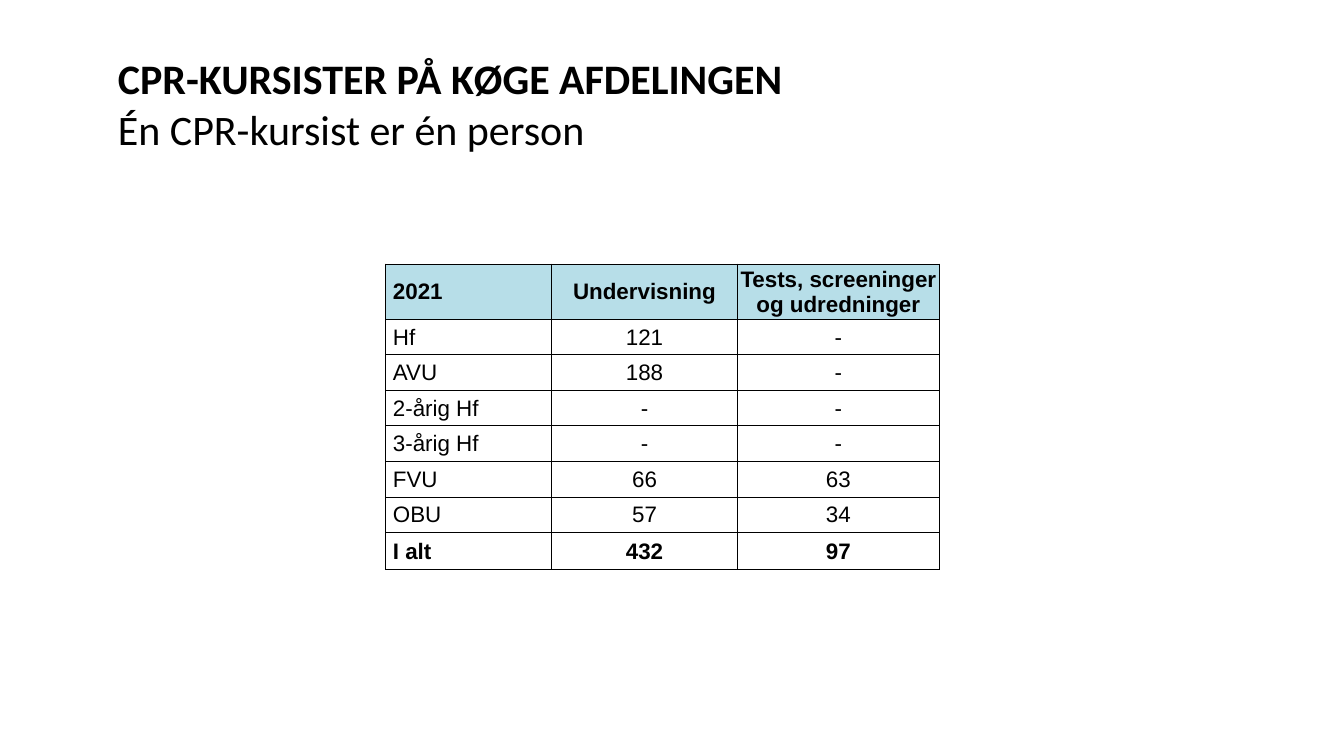
from dataclasses import dataclass

from lxml.etree import SubElement
from pptx import Presentation
from pptx.dml.color import RGBColor
from pptx.enum.text import MSO_ANCHOR, MSO_AUTO_SIZE, PP_ALIGN
from pptx.oxml.ns import qn
from pptx.util import Pt


@dataclass(frozen=True)
class Theme:
    ink: RGBColor = RGBColor(0x00, 0x00, 0x00)
    header_fill: RGBColor = RGBColor(0xB7, 0xDE, 0xE8)
    title_font: str = "Calibri"
    table_font: str = "Arial"
    title_size: int = 30
    table_size: int = 16
    border_width: float = 0.5


THEME = Theme()

HEADINGS = ("CPR-KURSISTER PÅ KØGE AFDELINGEN", "Én CPR-kursist er én person")
STUDENTS = (
    ("2021", "Undervisning", "Tests, screeninger og udredninger"),
    ("Hf", "121", "-"),
    ("AVU", "188", "-"),
    ("2-årig Hf", "-", "-"),
    ("3-årig Hf", "-", "-"),
    ("FVU", "66", "63"),
    ("OBU", "57", "34"),
    ("I alt", "432", "97"),
)
COLUMN_WIDTHS = (118.4, 133, 144)
HEADER_HEIGHT, ROW_HEIGHT, TOTAL_HEIGHT = 39.3, 25.4, 26.4


def set_font(paragraph, name, size, bold):
    paragraph.font.name = name
    paragraph.font.size = Pt(size)
    paragraph.font.bold = bold
    paragraph.font.color.rgb = THEME.ink


def add_borders(cell):
    properties = cell._tc.get_or_add_tcPr()
    for position, side in enumerate(("a:lnL", "a:lnR", "a:lnT", "a:lnB")):
        line = properties.makeelement(qn(side), {"w": str(Pt(THEME.border_width))})
        properties.insert(position, line)
        solid = SubElement(line, qn("a:solidFill"))
        SubElement(solid, qn("a:srgbClr"), val=str(THEME.ink))


def place_title(slide, left, top, width, height):
    title = slide.shapes.title
    title.left, title.top = Pt(left), Pt(top)
    title.width, title.height = Pt(width), Pt(height)
    frame = title.text_frame
    frame.text = "\n".join(HEADINGS)
    frame.word_wrap = True
    frame.auto_size = MSO_AUTO_SIZE.NONE
    frame.vertical_anchor = MSO_ANCHOR.TOP
    for index, heading in enumerate(frame.paragraphs):
        heading.alignment = PP_ALIGN.LEFT
        set_font(heading, THEME.title_font, THEME.title_size, index == 0)


def format_cell(cell, text, is_header, is_total, is_label):
    cell.text = text
    cell.vertical_anchor = MSO_ANCHOR.MIDDLE
    cell.margin_left = Pt(5.2 if is_label else 0.7)
    cell.margin_right = cell.margin_top = Pt(0.7)
    cell.margin_bottom = Pt(0)
    if is_header:
        cell.fill.solid()
        cell.fill.fore_color.rgb = THEME.header_fill
    else:
        cell.fill.background()
    add_borders(cell)
    entry = cell.text_frame.paragraphs[0]
    entry.alignment = PP_ALIGN.LEFT if is_label else PP_ALIGN.CENTER
    set_font(entry, THEME.table_font, THEME.table_size, is_header or is_total)


def place_student_table(slide, left, top):
    total_row = len(STUDENTS) - 1
    heights = [HEADER_HEIGHT] + [ROW_HEIGHT] * (total_row - 1) + [TOTAL_HEIGHT]
    table = slide.shapes.add_table(
        len(STUDENTS), len(COLUMN_WIDTHS), Pt(left), Pt(top),
        Pt(sum(COLUMN_WIDTHS)), Pt(sum(heights)),
    ).table
    table.horz_banding = False
    table.first_row = False
    for column, width in zip(table.columns, COLUMN_WIDTHS):
        column.width = Pt(width)
    for row, values in enumerate(STUDENTS):
        table.rows[row].height = Pt(heights[row])
        for column, value in enumerate(values):
            format_cell(table.cell(row, column), value,
                        row == 0, row == total_row, column == 0)


def main():
    deck = Presentation()
    deck.slide_width, deck.slide_height = Pt(960), Pt(540)
    slide = deck.slides.add_slide(deck.slide_layouts[5])

    # Heading
    place_title(slide, left=77, top=34, width=602, height=80)
    # Students by programme
    place_student_table(slide, left=275.5, top=188.6)

    deck.save("out.pptx")


if __name__ == "__main__":
    main()
